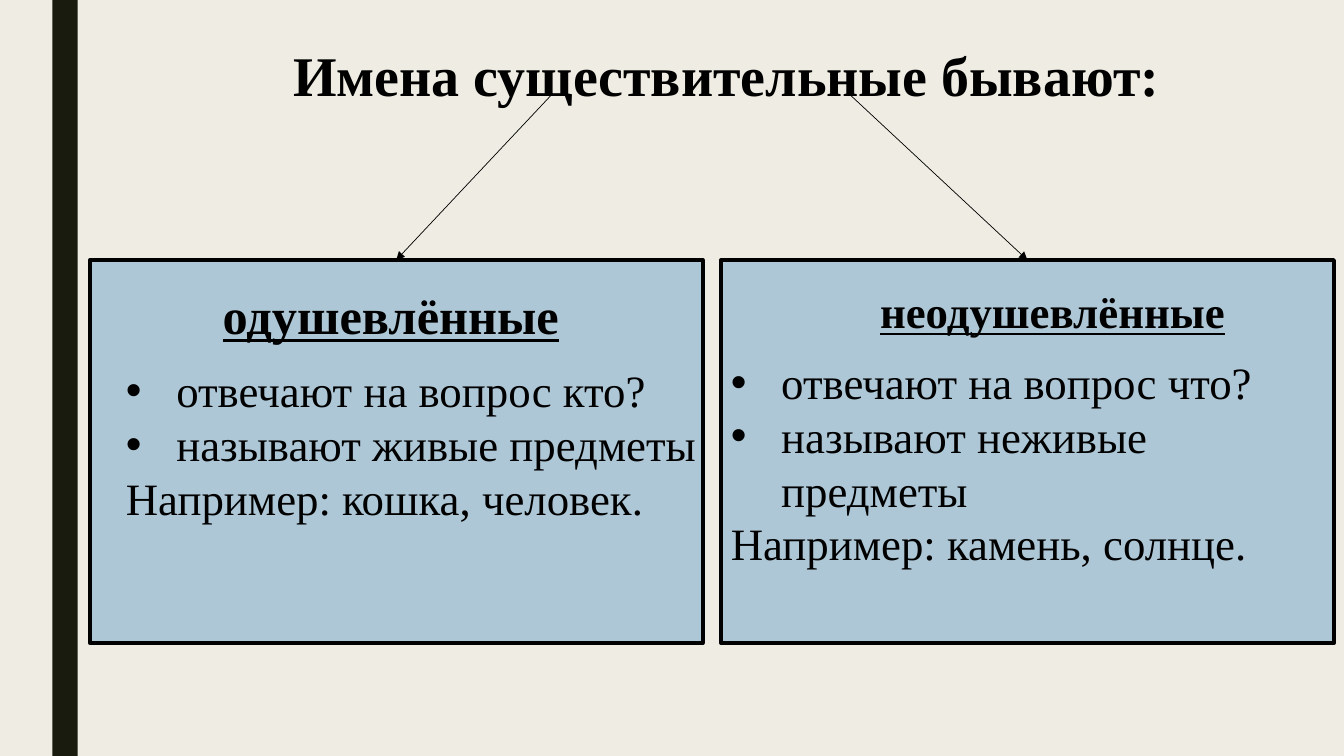
from pptx import Presentation
from pptx.dml.color import RGBColor
from pptx.enum.shapes import MSO_CONNECTOR, MSO_SHAPE
from pptx.enum.text import MSO_AUTO_SIZE, PP_ALIGN
from pptx.oxml.ns import qn
from pptx.util import Inches, Pt
from lxml.etree import SubElement

THEME = {
    "font": "Times New Roman",
    "background": RGBColor.from_string("EFEDE3"),
    "stripe": RGBColor.from_string("191B0E"),
    "panel": RGBColor.from_string("ADC7D6"),
    "ink": RGBColor.from_string("000000"),
    "title": Pt(40),
    "animate_heading": Pt(36),
    "inanimate_heading": Pt(32),
    "body": Pt(32),
}


def add_block(fill, left, top, width, height):
    shape = slide.shapes.add_shape(
        MSO_SHAPE.RECTANGLE, Inches(left), Inches(top), Inches(width), Inches(height))
    shape.shadow.inherit = False
    shape.fill.solid()
    shape.fill.fore_color.rgb = THEME[fill]
    shape.line.fill.background()
    return shape


def add_text(lines, box, size, wrap=True, align=PP_ALIGN.LEFT, bullets=0, **styles):
    frame = slide.shapes.add_textbox(*map(Inches, box)).text_frame
    frame.word_wrap = wrap
    frame.auto_size = MSO_AUTO_SIZE.SHAPE_TO_FIT_TEXT
    for index, line in enumerate(lines):
        paragraph = frame.paragraphs[0] if index == 0 else frame.add_paragraph()
        paragraph.alignment = align
        if index < bullets:
            properties = paragraph._p.get_or_add_pPr()
            properties.set("marL", str(Inches(0.5)))
            properties.set("indent", str(-Inches(0.5)))
            SubElement(properties, qn("a:buFont")).set("typeface", "Arial")
            SubElement(properties, qn("a:buChar")).set("char", "•")
        run = paragraph.add_run()
        run.text = line
        run.font.color.rgb = THEME["ink"]
        for name, value in {"name": THEME["font"], "size": THEME[size], **styles}.items():
            setattr(run.font, name, value)


presentation = Presentation()
presentation.slide_width = Inches(13.33)
presentation.slide_height = Inches(7.5)
slide = presentation.slides.add_slide(presentation.slide_layouts[6])
slide.background.fill.solid()
slide.background.fill.fore_color.rgb = THEME["background"]

# Side stripe
add_block("stripe", 0.52, 0, 0.25, 7.5)

# Panels for the two groups of nouns
PANEL_TOP = 2.58
for left in (0.89, 7.15):
    panel = add_block("panel", left, PANEL_TOP, 6.08, 3.8)
    panel.line.color.rgb = THEME["ink"]
    panel.line.width = Pt(2.75)

# Title
add_text(["Имена существительные бывают:"], (2.53, 0.35, 9.35, 1.08), "title",
         align=PP_ALIGN.CENTER, bold=True)

# Headings and descriptions
groups = [
    ("одушевлённые", (2.11, 2.77, 3.57, 0.71), "animate_heading", (1.15, 3.55, 6.05, 1.72),
     ["отвечают на вопрос кто?", "называют живые предметы", "Например: кошка, человек."]),
    ("неодушевлённые", (8.63, 2.77, 3.66, 0.64), "inanimate_heading", (7.15, 3.47, 5.96, 2.56),
     ["отвечают на вопрос что?", "называют неживые предметы", "Например: камень, солнце."]),
]
for heading, heading_box, heading_size, body_box, lines in groups:
    add_text([heading], heading_box, heading_size, wrap=False, bold=True, underline=True)
    add_text(lines, body_box, "body", bullets=2)

# Arrows from the title to the panels
for start, end in ((5.48, 3.93), (8.42, 10.19)):
    arrow = slide.shapes.add_connector(
        MSO_CONNECTOR.STRAIGHT, Inches(start), Inches(0.93), Inches(end), Inches(PANEL_TOP))
    arrow.line.color.rgb = THEME["ink"]
    arrow.line.width = Pt(0.5)
    SubElement(arrow.line._get_or_add_ln(), qn("a:tailEnd")).set("type", "triangle")
    SubElement(arrow._element.spPr, qn("a:effectLst"))

presentation.save("out.pptx")
